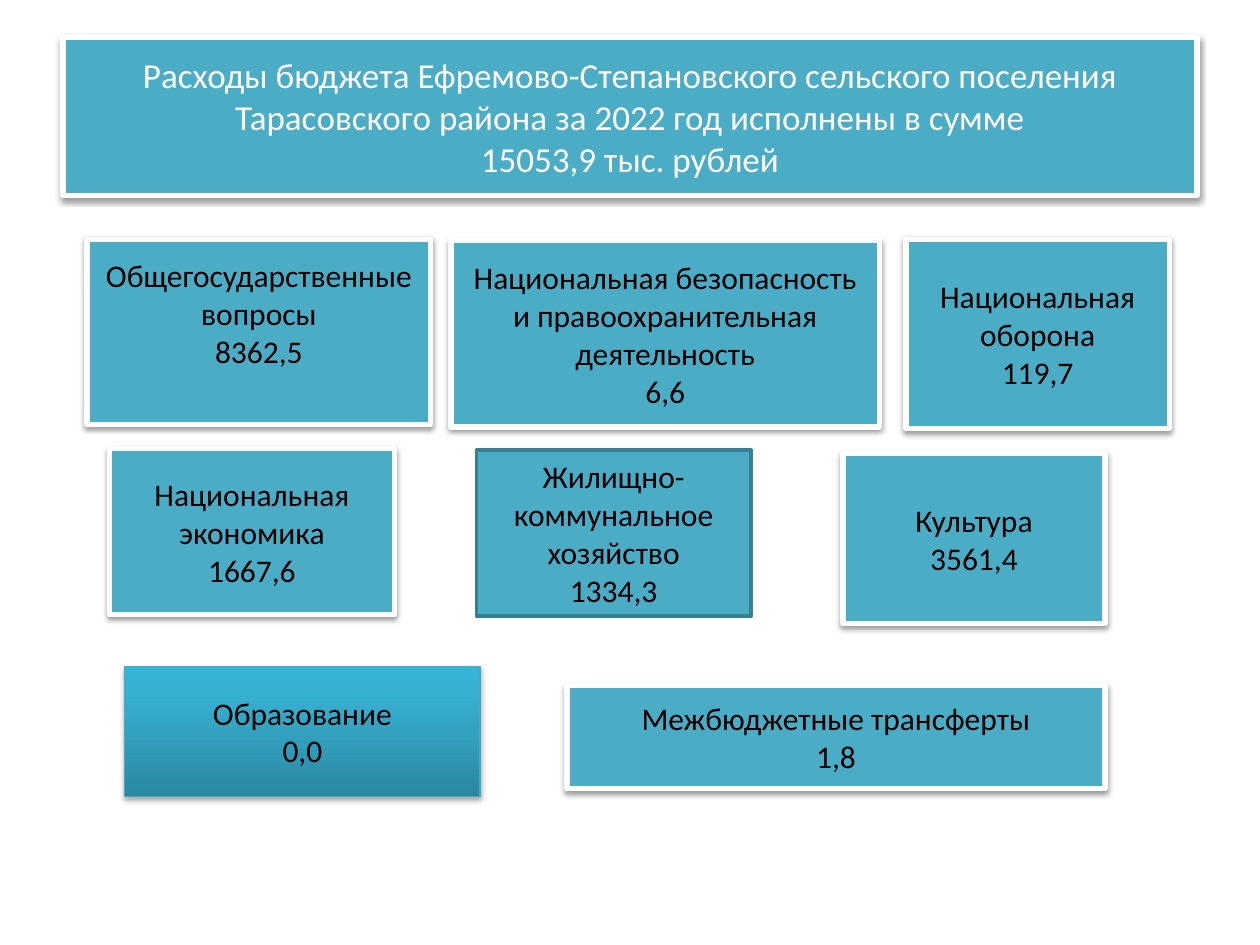
from copy import deepcopy
from dataclasses import dataclass
from typing import Optional

from lxml import etree
from pptx import Presentation
from pptx.dml.color import RGBColor
from pptx.enum.shapes import MSO_SHAPE
from pptx.enum.text import MSO_ANCHOR, MSO_AUTO_SIZE, PP_ALIGN
from pptx.oxml.ns import qn
from pptx.shapes.autoshape import Shape
from pptx.util import Inches, Pt

RECTANGLE = MSO_SHAPE.RECTANGLE
MIDDLE = MSO_ANCHOR.MIDDLE
CENTER = PP_ALIGN.CENTER
NO_AUTOFIT = MSO_AUTO_SIZE.NONE

WHITE = RGBColor(0xFF, 0xFF, 0xFF)
BLACK = RGBColor(0x00, 0x00, 0x00)
TEAL = RGBColor(0x4B, 0xAC, 0xC6)
DARK_TEAL = RGBColor(0x37, 0x7F, 0x92)
EDGE_TEAL = RGBColor(0x46, 0xAA, 0xC5)
GRADIENT = (
    (0, RGBColor(0x2A, 0x88, 0xA2)),
    (0.8, RGBColor(0x37, 0xB1, 0xD2)),
    (1, RGBColor(0x34, 0xB4, 0xD6)),
)

FONT = "Calibri"
SLIDE_WIDTH, SLIDE_HEIGHT = Inches(10), Inches(7.5)
COLUMN, ROW = SLIDE_WIDTH / 100, SLIDE_HEIGHT / 75


@dataclass(frozen=True)
class Area:
    column: float
    row: float
    columns: float
    rows: float


@dataclass(frozen=True)
class Shadow:
    opacity: int
    blur: float
    distance: float


@dataclass(frozen=True)
class Style:
    edge: RGBColor
    edge_width: float
    shadow: Optional[Shadow]
    gradient: bool = False


@dataclass(frozen=True)
class Expense:
    label: str
    amount: str
    area: Area
    style: Style
    raised_rows: float = 0


FRAMED = Style(WHITE, 3, Shadow(38, 3.15, 1.57))
OUTLINED = Style(DARK_TEAL, 2, None)
GLOSSY = Style(EDGE_TEAL, 0.75, Shadow(35, 3.15, 1.81), gradient=True)

HEADING = (
    "Расходы бюджета Ефремово-Степановского сельского поселения "
    "Тарасовского района за 2022 год исполнены в сумме\v"
    "15053,9 тыс. рублей"
)
HEADING_AREA = Area(5, 3, 90, 12.5)

EXPENSES = (
    Expense("Общегосударственные вопросы", "8362,5",
            Area(6.9, 19, 27.3, 14.7), FRAMED, raised_rows=3),
    Expense("Национальная безопасность и правоохранительная деятельность", "6,6",
            Area(35.8, 19.1, 34, 14.8), FRAMED),
    Expense("Национальная оборона", "119,7", Area(71.9, 19, 20.9, 15), FRAMED),
    Expense("Жилищно-коммунальное хозяйство", "1334,3",
            Area(37.8, 35.7, 21.8, 13.2), OUTLINED),
    Expense("Культура", "3561,4", Area(66.9, 36, 20.8, 13.5), FRAMED),
    Expense("Межбюджетные трансферты", "1,8", Area(45, 54.4, 42.7, 8.2), FRAMED),
    Expense("Национальная экономика", "1667,6", Area(8.7, 35.6, 22.6, 13.2), FRAMED),
    Expense("Образование", "0,0", Area(9.9, 52.9, 28.2, 10.3), GLOSSY),
)


def place(box: Shape, area: Area) -> None:
    box.left, box.width = round(area.column * COLUMN), round(area.columns * COLUMN)
    box.top, box.height = round(area.row * ROW), round(area.rows * ROW)


def fill_gradient(box: Shape) -> None:
    box.fill.gradient()
    box.fill.gradient_angle = 90
    stop_list = box._element.spPr.find(".//" + qn("a:gsLst"))
    stop_list.append(deepcopy(stop_list[-1]))
    for stop, (position, color) in zip(box.fill.gradient_stops, GRADIENT):
        stop.position = position
        stop.color.rgb = color


def cast_shadow(box: Shape, shadow: Shadow) -> None:
    effects = box._element.spPr.find(qn("a:effectLst"))
    outer = etree.SubElement(
        effects, qn("a:outerShdw"), blurRad=str(Pt(shadow.blur)),
        dist=str(Pt(shadow.distance)), dir="5400000", rotWithShape="0")
    color = etree.SubElement(outer, qn("a:srgbClr"), val=str(BLACK))
    etree.SubElement(color, qn("a:alpha"), val=str(shadow.opacity * 1000))


def apply_style(box: Shape, style: Style) -> None:
    if style.gradient:
        fill_gradient(box)
    else:
        box.fill.solid()
        box.fill.fore_color.rgb = TEAL
    box.line.color.rgb = style.edge
    box.line.width = Pt(style.edge_width)
    box.shadow.inherit = False
    if style.shadow:
        cast_shadow(box, style.shadow)


def write(box: Shape, text: str, *, size: float, color: RGBColor,
          raised_rows: float = 0) -> None:
    frame = box.text_frame
    frame.text = text
    frame.word_wrap = True
    frame.auto_size = NO_AUTOFIT
    frame.vertical_anchor = MIDDLE
    frame.margin_bottom = round((0.5 + raised_rows) * ROW)
    for paragraph in frame.paragraphs:
        paragraph.alignment = CENTER
        for run in paragraph.runs:
            run.font.name = FONT
            run.font.size = Pt(size)
            run.font.color.rgb = color


def main() -> None:
    presentation = Presentation()
    presentation.slide_width, presentation.slide_height = SLIDE_WIDTH, SLIDE_HEIGHT
    slide = presentation.slides.add_slide(presentation.slide_layouts[5])

    heading = slide.shapes.title
    place(heading, HEADING_AREA)
    apply_style(heading, FRAMED)
    write(heading, HEADING, size=20, color=WHITE)

    for expense in EXPENSES:
        box = slide.shapes.add_shape(RECTANGLE, 0, 0, 0, 0)
        place(box, expense.area)
        apply_style(box, expense.style)
        write(box, f"{expense.label}\n{expense.amount}", size=18, color=BLACK,
              raised_rows=expense.raised_rows)

    presentation.save("out.pptx")


if __name__ == "__main__":
    main()
